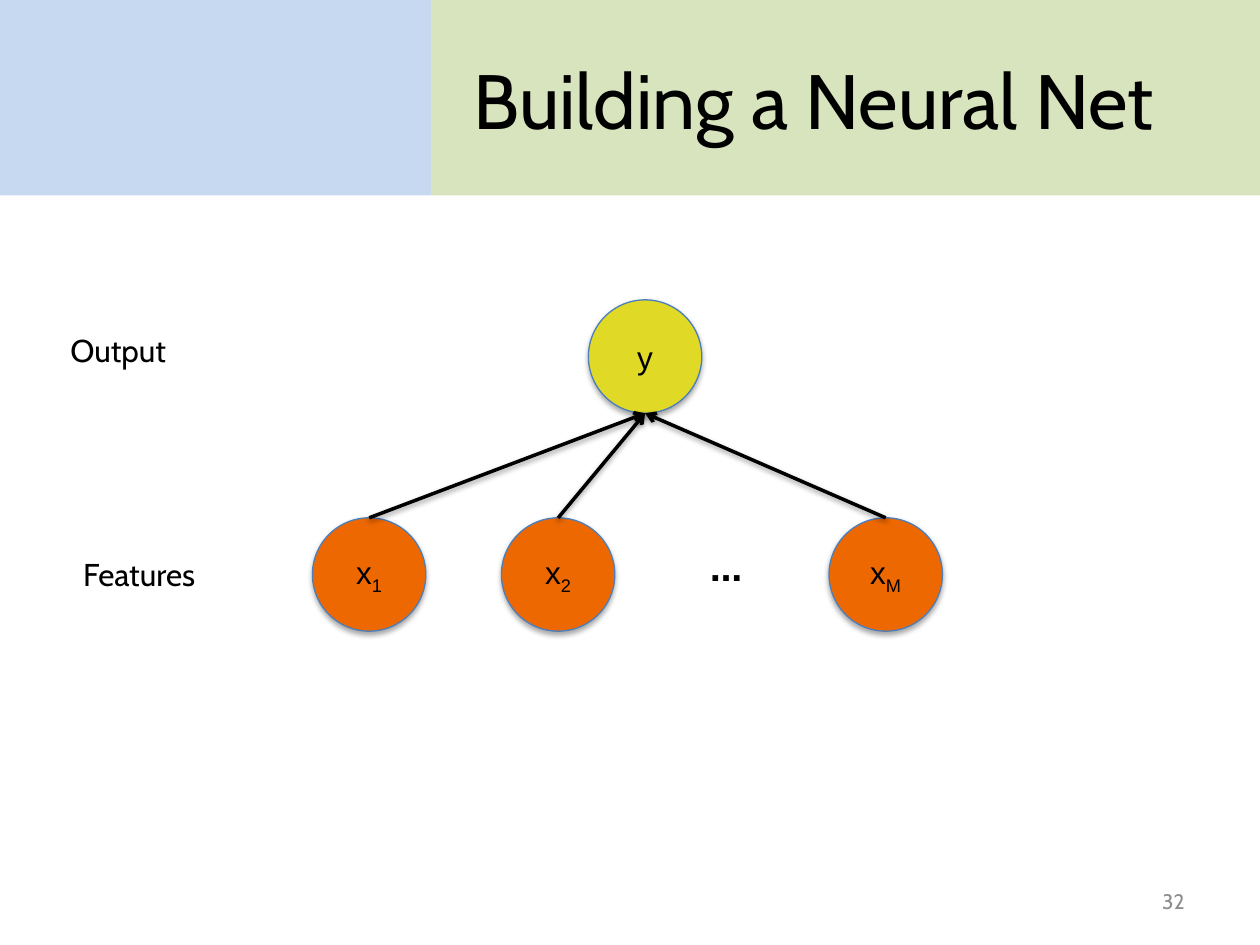
from lxml import etree
from pptx import Presentation
from pptx.dml.color import RGBColor
from pptx.enum.shapes import MSO_CONNECTOR, MSO_SHAPE
from pptx.enum.text import MSO_ANCHOR, PP_ALIGN
from pptx.oxml.ns import qn
from pptx.util import Pt

PX = 9144
NODE = 90
INPUT_TOP = 411
BLACK = RGBColor(0x00, 0x00, 0x00)
GREY = RGBColor(0x8C, 0x8C, 0x8C)
BLUE = RGBColor(0xC6, 0xD9, 0xF1)
GREEN = RGBColor(0xD7, 0xE4, 0xBD)
ORANGE = RGBColor(0xEE, 0x68, 0x02)
YELLOW = RGBColor(0xE0, 0xD9, 0x25)
OUTLINE = RGBColor(0x4B, 0x7E, 0xBC)
RECTANGLE = MSO_SHAPE.RECTANGLE
CIRCLE = MSO_SHAPE.FLOWCHART_CONNECTOR
STRAIGHT = MSO_CONNECTOR.STRAIGHT
LEFT, CENTER, RIGHT = PP_ALIGN.LEFT, PP_ALIGN.CENTER, PP_ALIGN.RIGHT
TOP, MIDDLE = MSO_ANCHOR.TOP, MSO_ANCHOR.MIDDLE


def scale(*lengths):
    """Turn px lengths into EMU."""
    return [length * PX for length in lengths]


def write(shape, text, subscript="", size=18, font="Cabin", color=BLACK,
          bold=False, align=CENTER, anchor=MIDDLE):
    """Fill a shape with one formatted paragraph and an optional subscript."""
    frame = shape.text_frame
    frame.word_wrap = True
    frame.vertical_anchor = anchor
    para = frame.paragraphs[0]
    para.alignment = align
    for content in filter(None, (text, subscript)):
        span = para.add_run()
        span.text = content
        span.font.size = Pt(size)
        span.font.name = font
        span.font.bold = bold
        span.font.color.rgb = color
    if subscript:
        span.font._element.set("baseline", "-25000")


def add_shadow(effects, distance, opacity):
    """Put a soft black shadow below an element."""
    shadow = etree.SubElement(effects, qn("a:outerShdw"), blurRad="40000",
                              dist=str(distance), dir="5400000", rotWithShape="0")
    color = etree.SubElement(shadow, qn("a:srgbClr"), val="000000")
    etree.SubElement(color, qn("a:alpha"), val=str(opacity * 1000))


class NetworkSlide:
    """Holds the current slide and draws its elements in one style."""

    def __init__(self, deck):
        """Add a slide that has only a title."""
        self.page = deck.slides.add_slide(deck.slide_layouts[5])
        self.shapes = self.page.shapes

    def title(self, text, *area):
        """Place and write the title."""
        box = self.shapes.title
        box.left, box.top, box.width, box.height = scale(*area)
        write(box, text, size=44)

    def band(self, fill, *area):
        """Draw a header band behind the title."""
        band = self.shapes.add_shape(RECTANGLE, *scale(*area))
        band.shadow.inherit = False
        band.fill.solid()
        band.fill.fore_color.rgb = fill
        band.line.fill.background()
        self.shapes.title._element.addprevious(band._element)

    def node(self, text, fill, left, top, subscript=""):
        """Draw a round network node."""
        node = self.shapes.add_shape(CIRCLE, *scale(left, top, NODE, NODE))
        node.fill.solid()
        node.fill.fore_color.rgb = fill
        node.line.color.rgb = OUTLINE
        node.line.width = Pt(0.75)
        node.shadow.inherit = False
        add_shadow(node._element.spPr.find(qn("a:effectLst")), 23000, 35)
        write(node, text, subscript, font="Arial")
        return node

    def edge(self, output, feature):
        """Draw an arrow from a feature node up to the output node."""
        edge = self.shapes.add_connector(
            STRAIGHT, output.left + output.width // 2, output.top + output.height,
            feature.left + feature.width // 2, feature.top)
        edge.end_connect(feature, 0)
        edge.line.color.rgb = BLACK
        edge.line.width = Pt(2)
        etree.SubElement(edge.line._get_or_add_ln(), qn("a:headEnd"), type="arrow")
        effects = etree.SubElement(edge._element.spPr, qn("a:effectLst"))
        add_shadow(effects, 20000, 38)

    def label(self, text, *area, **style):
        """Write free text."""
        write(self.shapes.add_textbox(*scale(*area)), text, **style)


def main():
    """Build the neural net slide."""
    deck = Presentation()
    deck.slide_width, deck.slide_height = scale(1000, 750)
    slide = NetworkSlide(deck)
    slide.band(BLUE, 0, 0, 342, 155)
    slide.band(GREEN, 342, 0, 658, 155)
    slide.title("Building a Neural Net", 342, 16, 608, 125)

    output = slide.node("y", YELLOW, 467, 238)
    features = [slide.node("x", ORANGE, left, INPUT_TOP, subscript)
                for subscript, left in (("1", 248), ("2", 398), ("M", 658))]
    slide.label("…", 548, 420, 58, 54, size=26, bold=True)
    for feature in features:
        slide.edge(output, feature)

    slide.label("Output", 46, 258, 142, 40, align=LEFT, anchor=TOP)
    slide.label("Features", -2, 436, 225, 40, anchor=TOP)
    slide.label("32", 717, 695, 233, 40, size=12, color=GREY, align=RIGHT)
    deck.save("out.pptx")


if __name__ == "__main__":
    main()
